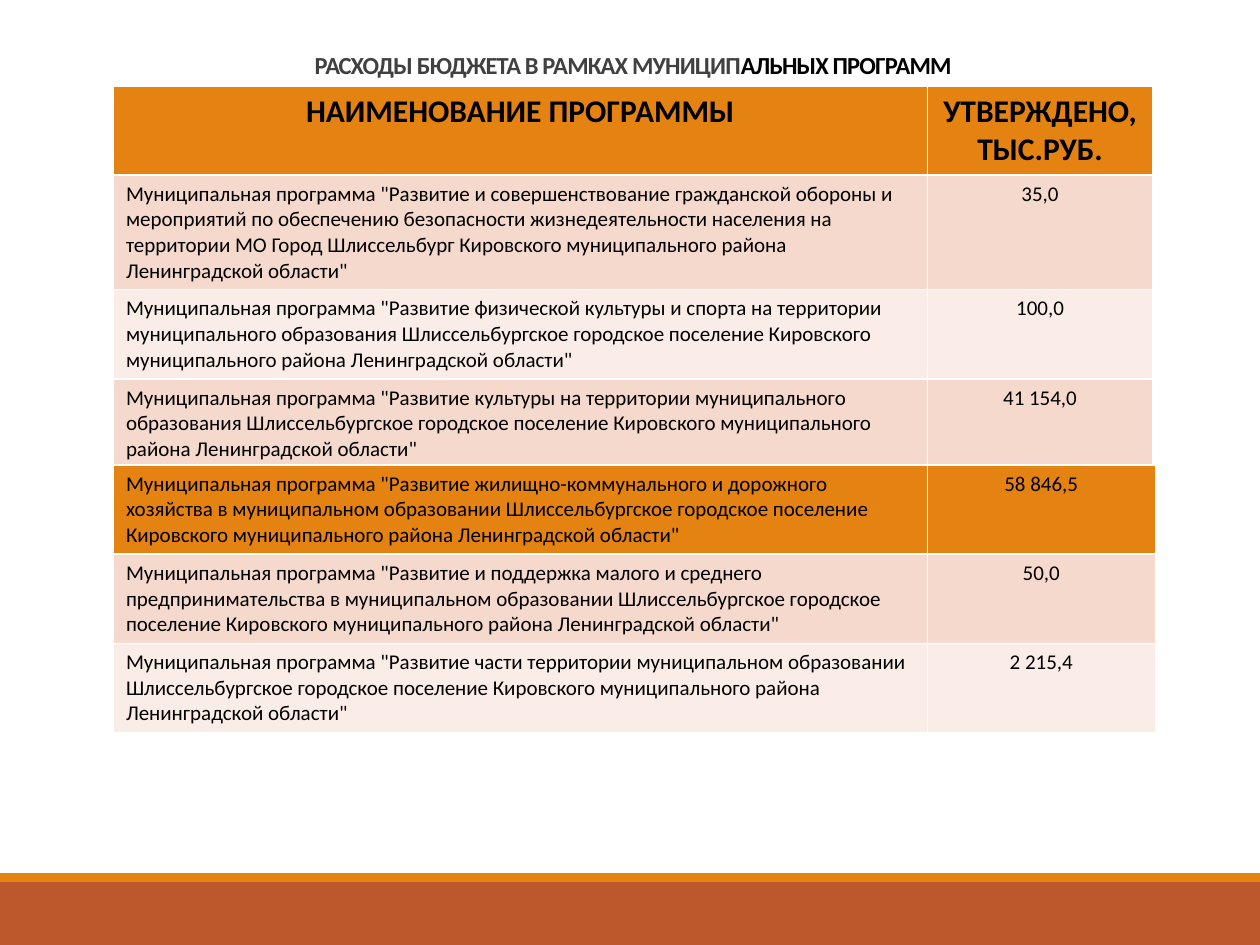
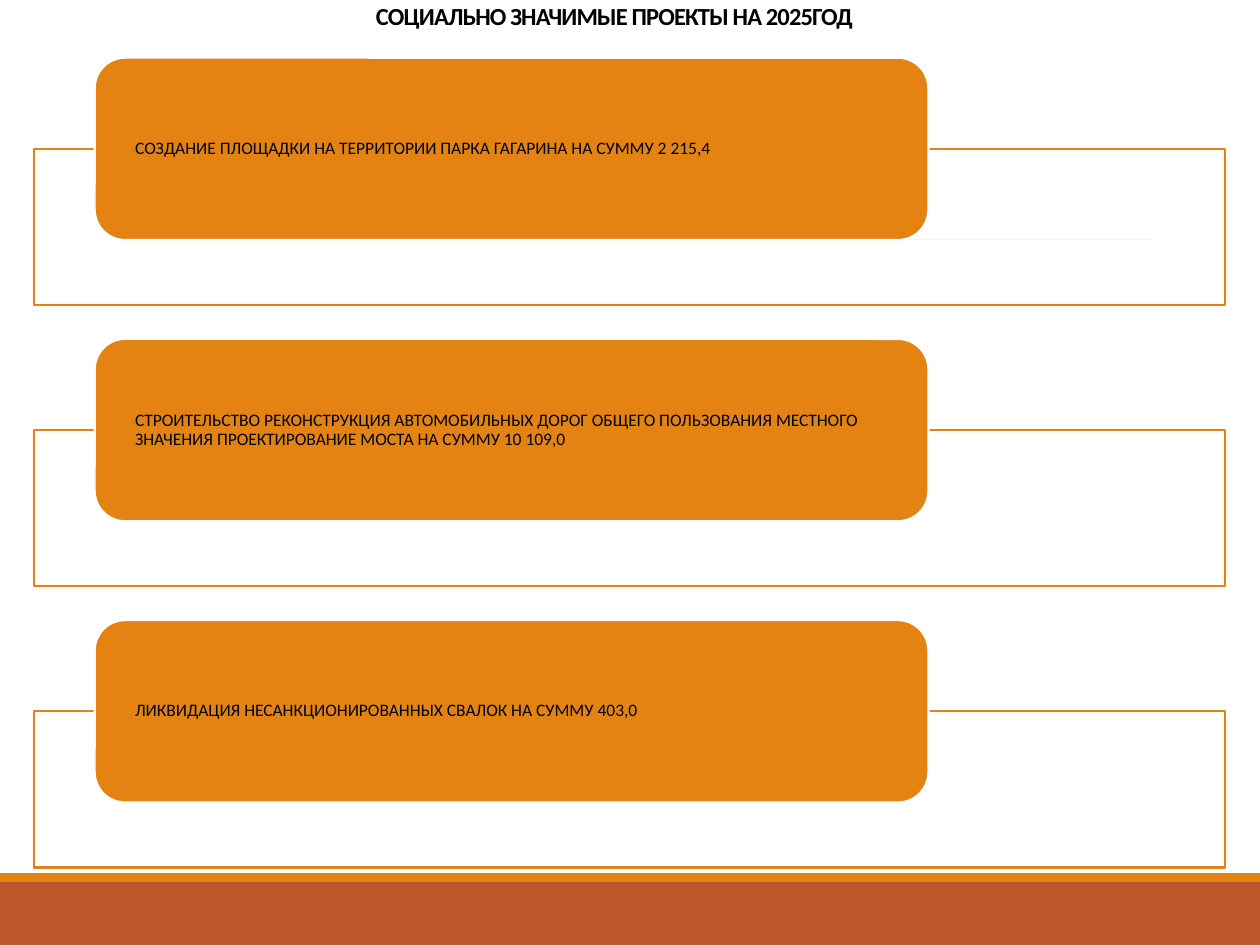
from lxml import etree
from pptx import Presentation
from pptx.dml.color import RGBColor
from pptx.enum.shapes import MSO_CONNECTOR, MSO_SHAPE
from pptx.enum.text import MSO_ANCHOR, PP_ALIGN
from pptx.oxml.ns import qn
from pptx.util import Pt

RECTANGLE = MSO_SHAPE.RECTANGLE
ROUNDED = MSO_SHAPE.ROUNDED_RECTANGLE
STRAIGHT = MSO_CONNECTOR.STRAIGHT
LEFT, CENTER = PP_ALIGN.LEFT, PP_ALIGN.CENTER
MIDDLE, BOTTOM = MSO_ANCHOR.MIDDLE, MSO_ANCHOR.BOTTOM

WHITE = RGBColor(0xFF, 0xFF, 0xFF)
BLACK = RGBColor(0x00, 0x00, 0x00)
DARK_GRAY = RGBColor(0x40, 0x40, 0x40)
GRAY = RGBColor(0x80, 0x80, 0x80)
ORANGE = RGBColor(0xE4, 0x83, 0x12)
RUST = RGBColor(0xBD, 0x58, 0x2C)
BAND_DARK = RGBColor(0xF5, 0xD9, 0xCC)
BAND_LIGHT = RGBColor(0xFA, 0xED, 0xE7)

FONT = "Calibri"
PAGE_WIDTH, PAGE_HEIGHT = 720, 540
NAME_WIDTH = 465.1

HEADER = ("НАИМЕНОВАНИЕ ПРОГРАММЫ", "УТВЕРЖДЕНО, ТЫС.РУБ.")
SETTLEMENT = "Шлиссельбургское городское поселение Кировского муниципального района Ленинградской области"
FIRST_PROGRAMS = [
    ("Развитие и совершенствование гражданской обороны и мероприятий по обеспечению "
     "безопасности жизнедеятельности населения на территории МО Город Шлиссельбург "
     "Кировского муниципального района Ленинградской области", "35,0"),
    ("Развитие физической культуры и спорта на территории муниципального образования "
     + SETTLEMENT, "100,0"),
    ("Развитие культуры на территории муниципального образования " + SETTLEMENT, "41 154,0"),
]
MORE_PROGRAMS = [
    ("Развитие жилищно-коммунального и дорожного хозяйства в муниципальном образовании "
     + SETTLEMENT, "58 846,5"),
    ("Развитие и поддержка малого и среднего предпринимательства в муниципальном образовании "
     + SETTLEMENT, "50,0"),
    ("Развитие части территории муниципальном образовании " + SETTLEMENT, "2 215,4"),
]
PROJECTS = [
    "СОЗДАНИЕ ПЛОЩАДКИ НА ТЕРРИТОРИИ ПАРКА ГАГАРИНА НА СУММУ 2 215,4",
    "СТРОИТЕЛЬСТВО РЕКОНСТРУКЦИЯ АВТОМОБИЛЬНЫХ ДОРОГ ОБЩЕГО ПОЛЬЗОВАНИЯ МЕСТНОГО "
    "ЗНАЧЕНИЯ ПРОЕКТИРОВАНИЕ МОСТА НА СУММУ 10 109,0",
    "ЛИКВИДАЦИЯ НЕСАНКЦИОНИРОВАННЫХ СВАЛОК НА СУММУ 403,0",
]


def style_font(font, size, color=BLACK, bold=False):
    font.name, font.size, font.bold = FONT, Pt(size), bold
    font.color.rgb = color


def add_block(page, kind, left, top, width, height, fill, line=None):
    block = page.shapes.add_shape(kind, Pt(left), Pt(top), Pt(width), Pt(height))
    block.shadow.inherit = False
    block.fill.solid()
    block.fill.fore_color.rgb = fill
    if line is None:
        block.line.fill.background()
    else:
        block.line.color.rgb = line
        block.line.width = Pt(1.25)
    return block


def add_page(deck):
    page = deck.slides.add_slide(deck.slide_layouts[6])
    add_block(page, RECTANGLE, 0, PAGE_HEIGHT - 36, PAGE_WIDTH, 36, RUST)
    add_block(page, RECTANGLE, 0, PAGE_HEIGHT - 41, PAGE_WIDTH, 5, ORANGE)
    rule = page.shapes.add_connector(STRAIGHT, Pt(70.5), Pt(136.8), Pt(658.8), Pt(136.8))
    rule.line.color.rgb = GRAY
    rule.line.width = Pt(0.5)
    etree.SubElement(rule._element.spPr, qn("a:effectLst"))
    return page


def add_title(page, left, top, width, height, parts):
    box = page.shapes.add_textbox(Pt(left), Pt(top), Pt(width), Pt(height))
    frame = box.text_frame
    frame.word_wrap = True
    frame.vertical_anchor = BOTTOM
    para = frame.paragraphs[0]
    para.alignment = CENTER
    para.line_spacing = 0.85
    for text, color in parts:
        span = para.add_run()
        span.text = text
        style_font(span.font, 14, color, bold=True)
        span._r.get_or_add_rPr().set("spc", "-50")


def add_program_table(page, left, top, width, heights, rows, header_size, header_bold):
    table = page.shapes.add_table(len(rows), 2, Pt(left), Pt(top), Pt(width), Pt(sum(heights))).table
    table.columns[0].width = Pt(NAME_WIDTH)
    table.columns[1].width = Pt(width - NAME_WIDTH)
    for row_index, (texts, height) in enumerate(zip(rows, heights)):
        is_header = row_index == 0
        table.rows[row_index].height = Pt(height)
        band = BAND_DARK if row_index % 2 else BAND_LIGHT
        for column, text in enumerate(texts):
            cell = table.cell(row_index, column)
            cell.fill.solid()
            cell.fill.fore_color.rgb = ORANGE if is_header else band
            cell.text_frame.text = text
            para = cell.text_frame.paragraphs[0]
            centered = column == 1 or (is_header and header_bold)
            para.alignment = CENTER if centered else LEFT
            size = header_size if is_header else 12
            style_font(para.runs[0].font, size, bold=is_header and header_bold)


def add_project(page, left, top, width, text):
    frame = add_block(page, RECTANGLE, left, top + 52.1, width, 89.3, WHITE, ORANGE)
    fill_color = frame._element.spPr.find(qn("a:solidFill"))[0]
    etree.SubElement(fill_color, qn("a:alpha"), val="90000")
    card = add_block(page, ROUNDED, left + 34.6, top, width * 0.7, 104.2, ORANGE, WHITE)
    label = card.text_frame
    label.word_wrap = True
    label.vertical_anchor = MIDDLE
    label.margin_left = label.margin_right = Pt(18)
    label.margin_top = label.margin_bottom = 0
    label.text = text
    para = label.paragraphs[0]
    para.alignment = LEFT
    para.line_spacing = 0.9
    style_font(para.runs[0].font, 10)


def name_programs(programs):
    return [(f'Муниципальная программа "{name}"', amount) for name, amount in programs]


def build_budget_page(deck):
    page = add_page(deck)
    add_title(page, 64.8, 22.3, 594, 26.6,
              [("РАСХОДЫ БЮДЖЕТА В РАМКАХ МУНИЦИП", DARK_GRAY), ("АЛЬНЫХ ПРОГРАММ", BLACK)])
    add_program_table(page, 64.8, 49, 594, [51, 65.5, 51, 51],
                      [HEADER] + name_programs(FIRST_PROGRAMS), 18, True)
    add_program_table(page, 64.8, 265.7, 595.4, [51, 51, 51],
                      name_programs(MORE_PROGRAMS), 12, False)


def build_projects_page(deck):
    page = add_page(deck)
    add_title(page, 54, 3.6, 594, 17.3, [("СОЦИАЛЬНО ЗНАЧИМЫЕ ПРОЕКТЫ НА 2025ГОД", BLACK)])
    for index, project in enumerate(PROJECTS):
        add_project(page, 19.5, 33 + index * 160.7, 680.6, project)


def main():
    deck = Presentation()
    deck.slide_width, deck.slide_height = Pt(PAGE_WIDTH), Pt(PAGE_HEIGHT)
    build_budget_page(deck)
    build_projects_page(deck)
    deck.save("out.pptx")


if __name__ == "__main__":
    main()
